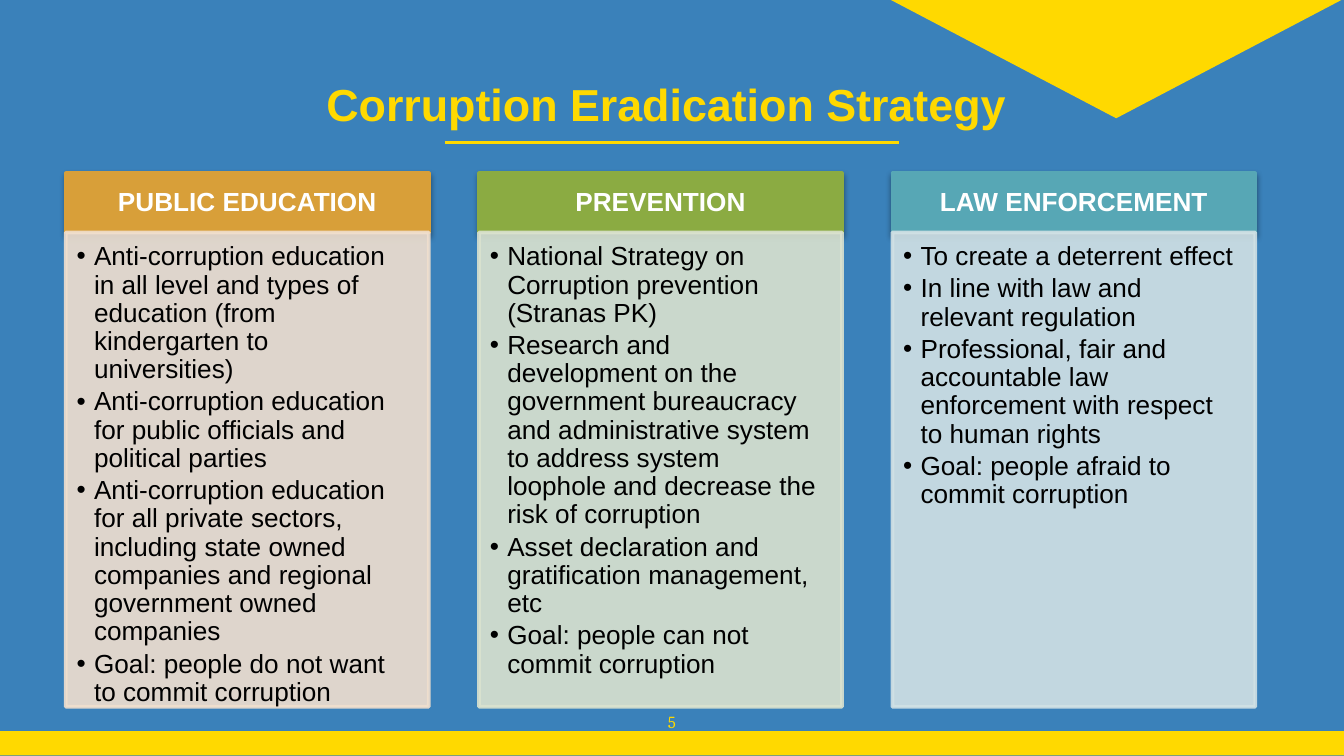
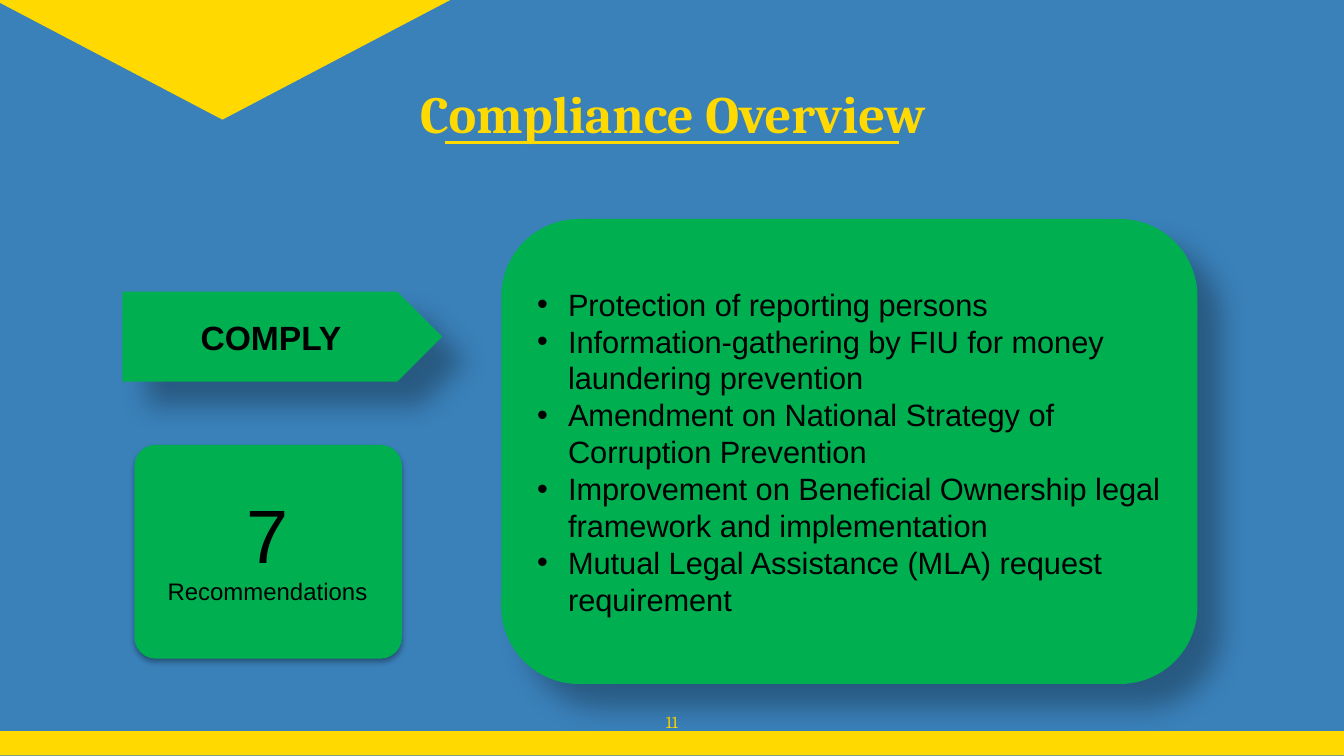
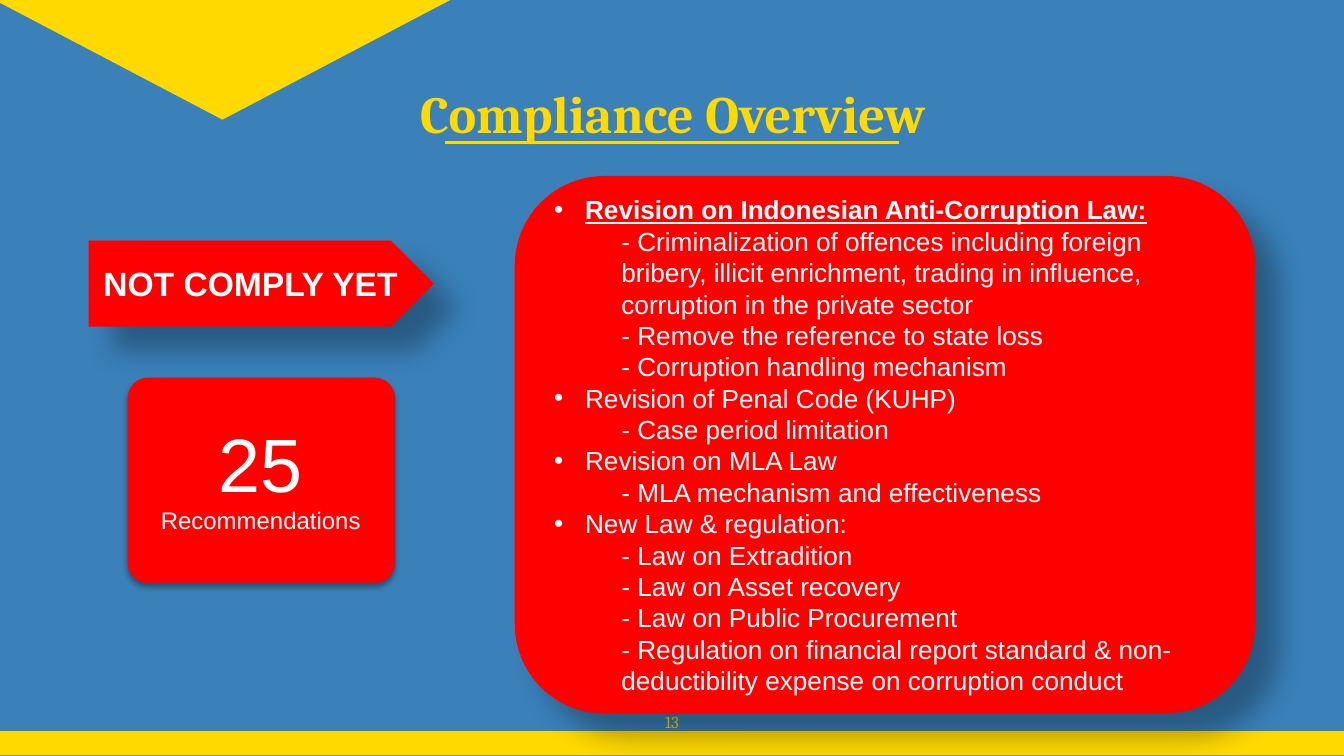
from lxml import etree
from pptx import Presentation
from pptx import util as u
from pptx.dml.color import RGBColor
from pptx.enum import shapes as es, text as et
from pptx.oxml import ns

INK = {"back": "3A81BA", "gold": "FFD900", "white": "FFFFFF", "black": "000000",
       "green": "00B050", "red": "FF0000",
       "amber": "D89F39", "sand": "F0DFCE", "leaf": "8BAB42", "mint": "DAE2CF",
       "teal": "57A7B5", "ice": "D1E1E5"}
KIND = es.MSO_SHAPE
MID = et.MSO_ANCHOR.MIDDLE
TOP = et.MSO_ANCHOR.TOP
CENTER = et.PP_ALIGN.CENTER
LEFT = et.PP_ALIGN.LEFT
DEEP = (30, 15, 18, 45)
SOFT = (35, 3.1, 1.8, 90)
LOW = (38, 3.1, 1.6, 90)


def rgb(hue):
    return RGBColor.from_string(INK[hue])


def sub(node, tag, **attrs):
    return etree.SubElement(node, ns.qn(tag), {k: str(v) for k, v in attrs.items()})


def cast(shape, shade):
    alpha, blur, dist, angle = shade
    glow = sub(shape.element.spPr.find(ns.qn("a:effectLst")), "a:outerShdw",
               blurRad=u.Pt(blur), dist=u.Pt(dist), dir=angle * 60000,
               algn="bl", rotWithShape=0)
    sub(sub(glow, "a:srgbClr", val=INK["black"]), "a:alpha", val=alpha * 1000)


def draw(slide, kind, box, hue, shade=None, edge=0, alpha=100):
    shape = slide.shapes.add_shape(kind, *map(u.Inches, box))
    shape.shadow.inherit = False
    shape.fill.solid()
    shape.fill.fore_color.rgb = rgb(hue)
    if edge:
        shape.line.color.rgb = rgb(hue)
        shape.line.width = u.Pt(edge)
    else:
        shape.line.fill.background()
    if alpha < 100:
        for node in list(shape.element.spPr.iter(ns.qn("a:srgbClr"))):
            sub(node, "a:alpha", val=alpha * 1000)
    if shade:
        cast(shape, shade)
    return shape


def setup(frame, pads=(0.1, 0.05, 0.1, 0.05), anchor=MID):
    frame.word_wrap = True
    frame.vertical_anchor = anchor
    (frame.margin_left, frame.margin_top,
     frame.margin_right, frame.margin_bottom) = map(u.Inches, pads)


def style(para, size, hue, font="Arial", bold=False, align=CENTER, space=None):
    para.alignment = align
    para.line_spacing = space
    for run in para.runs:
        run.font.size = u.Pt(size)
        run.font.name = font
        run.font.bold = bold
        run.font.color.rgb = rgb(hue)


def indent(para, left, bullet=True):
    props = para._p.get_or_add_pPr()
    props.set("marL", str(u.Inches(left)))
    props.set("indent", str(u.Inches(-left if bullet else 0)))
    if bullet:
        sub(props, "a:buFont", typeface="Arial")
        sub(props, "a:buChar", char="•")


def write(slide, box, words, **opts):
    frame = slide.shapes.add_textbox(*map(u.Inches, box)).text_frame
    setup(frame, **opts)
    frame.text = words
    return frame.paragraphs


def base(deck, page, left, top):
    slide = deck.slides.add_slide(deck.slide_layouts[6])
    slide.background.fill.solid()
    slide.background.fill.fore_color.rgb = rgb("back")
    rule = slide.shapes.add_connector(
        es.MSO_CONNECTOR.STRAIGHT, *map(u.Inches, (3.31, 1.06, 6.69, 1.06)))
    rule.line.color.rgb = rgb("gold")
    rule.line.width = u.Pt(1.5)
    sub(rule.element.spPr, "a:effectLst")
    draw(slide, KIND.RECTANGLE, (0, 5.44, 10, 0.18), "gold")
    paras = write(slide, (4.7, 5.22, 0.6, 0.4), str(page), pads=[0.1] * 4, anchor=TOP)
    style(paras[0], 9, "gold", "Cambria")
    peak = draw(slide, KIND.ISOSCELES_TRIANGLE, (left, top, 3.39, 0.89), "gold")
    peak.rotation = 180
    return slide


def column(slide, box, head, lines, dark, pale):
    left, top, width, height = box
    cap = 0.44
    bar = draw(slide, KIND.RECTANGLE, (left, top, width, cap), dark, LOW, 2)
    setup(bar.text_frame, (0.11, 0.06, 0.11, 0.06))
    bar.text_frame.text = head
    style(bar.text_frame.paragraphs[0], 14, "white", bold=True, space=0.9)
    body = draw(slide, KIND.RECTANGLE, (left, top + cap, width, height - cap),
                pale, edge=2, alpha=90)
    frame = body.text_frame
    setup(frame, (0.08, 0.08, 0.12, 0.12), TOP)
    frame.text = "\n".join(lines)
    for para in frame.paragraphs:
        indent(para, 0.13)
        style(para, 14, "black", align=LEFT, space=0.9)
        para.space_after = u.Pt(2.1)


def panel(slide, box, lines, size, hue, ink):
    frame = draw(slide, KIND.FLOWCHART_ALTERNATE_PROCESS, box, hue, DEEP).text_frame
    setup(frame)
    frame.text = "\n".join(lines)
    for para in frame.paragraphs:
        minor = para.text.startswith("- ")
        if minor:
            para.level = 1
        indent(para, 0.5 if minor else 0.23, not minor)
        style(para, size, ink, align=LEFT)
    return frame


def arrow(slide, box, words, hue, ink):
    frame = draw(slide, KIND.PENTAGON, box, hue, DEEP).text_frame
    setup(frame)
    frame.text = words
    style(frame.paragraphs[0], 18, ink, bold=True)


def tally(slide, box, count, hue, ink):
    left, top, width, height = box
    card = draw(slide, KIND.ROUNDED_RECTANGLE, box, hue, SOFT)
    card.adjustments[0] = 0.1
    paras = write(slide, (left + 0.04, top + 0.05, width - 0.09, height - 0.09),
                  f"{count}\nRecommendations", pads=[0.03] * 4)
    for para, size in zip(paras, (40.5, 12.8)):
        style(para, size, ink, space=0.9)


def review(deck, page):
    slide = base(deck, page, -0.04, 0)
    paras = write(slide, (1.33, 0.54, 7.35, 0.6), "Compliance Overview",
                  pads=[0.1] * 4)
    style(paras[0], 28, "gold", "Cambria", True)
    return slide


def plan(deck):
    slide = base(deck, 5, 6.61, -0.01)
    paras = write(slide, (2.33, 0.52, 5.56, 0.64),
                  "Corruption Eradication Strategy", anchor=TOP)
    style(paras[0], 24, "gold", bold=True, align=LEFT)
    items = [
        ("PUBLIC EDUCATION", "amber", "sand", [
            "Anti-corruption education in all level and types of education (from kindergarten to universities)",
            "Anti-corruption education for public officials and political parties",
            "Anti-corruption education for all private sectors, including state owned companies and regional government owned companies",
            "Goal: people do not want to commit corruption"]),
        ("PREVENTION", "leaf", "mint", [
            "National Strategy on Corruption prevention (Stranas PK)",
            "Research and development on the government bureaucracy and administrative system to address system loophole and decrease the risk of corruption",
            "Asset declaration and gratification management, etc",
            "Goal: people can not commit corruption"]),
        ("LAW ENFORCEMENT", "teal", "ice", [
            "To create a deterrent effect",
            "In line with law and relevant regulation",
            "Professional, fair and accountable law enforcement with respect to human rights",
            "Goal: people afraid to commit corruption"]),
    ]
    first, last = 0.49, 6.64
    step = (last - first) / (len(items) - 1)
    for i, (head, dark, pale, lines) in enumerate(items):
        column(slide, (first + step * i, 1.29, 2.7, 3.97), head, lines, dark, pale)


def comply(deck):
    slide = review(deck, 11)
    tone = "green", "black"
    panel(slide, (3.73, 1.63, 5.18, 3.46), [
        "Protection of reporting persons",
        "Information-gathering by FIU for money laundering prevention",
        "Amendment on National Strategy of Corruption Prevention",
        "Improvement on Beneficial Ownership legal framework and implementation",
        "Mutual Legal Assistance (MLA) request requirement"], 16.5, *tone)
    arrow(slide, (0.91, 2.17, 2.38, 0.67), "COMPLY", *tone)
    tally(slide, (1, 3.31, 1.99, 1.59), 7, *tone)


def pending(deck):
    slide = review(deck, 13)
    tone = "red", "white"
    frame = panel(slide, (3.83, 1.31, 5.51, 4), [
        "Revision on Indonesian Anti-Corruption Law:",
        "- Criminalization of offences including foreign bribery, illicit enrichment, trading in influence, corruption in the private sector",
        "- Remove the reference to state loss",
        "- Corruption handling mechanism",
        "Revision of Penal Code (KUHP)",
        "- Case period limitation",
        "Revision on MLA Law",
        "- MLA mechanism and effectiveness",
        "New Law & regulation:",
        "- Law on Extradition",
        "- Law on Asset recovery",
        "- Law on Public Procurement",
        "- Regulation on financial report standard & non-deductibility expense on corruption conduct"],
        14, *tone)
    lead = frame.paragraphs[0].runs[0].font
    lead.bold = lead.underline = True
    arrow(slide, (0.66, 1.79, 2.57, 0.64), "NOT COMPLY YET", *tone)
    tally(slide, (0.95, 2.81, 1.99, 1.53), 25, *tone)


def main():
    deck = Presentation()
    deck.slide_width = u.Inches(10)
    deck.slide_height = deck.slide_width * 9 // 16
    plan(deck)
    comply(deck)
    pending(deck)
    deck.save("out.pptx")


if __name__ == "__main__":
    main()
